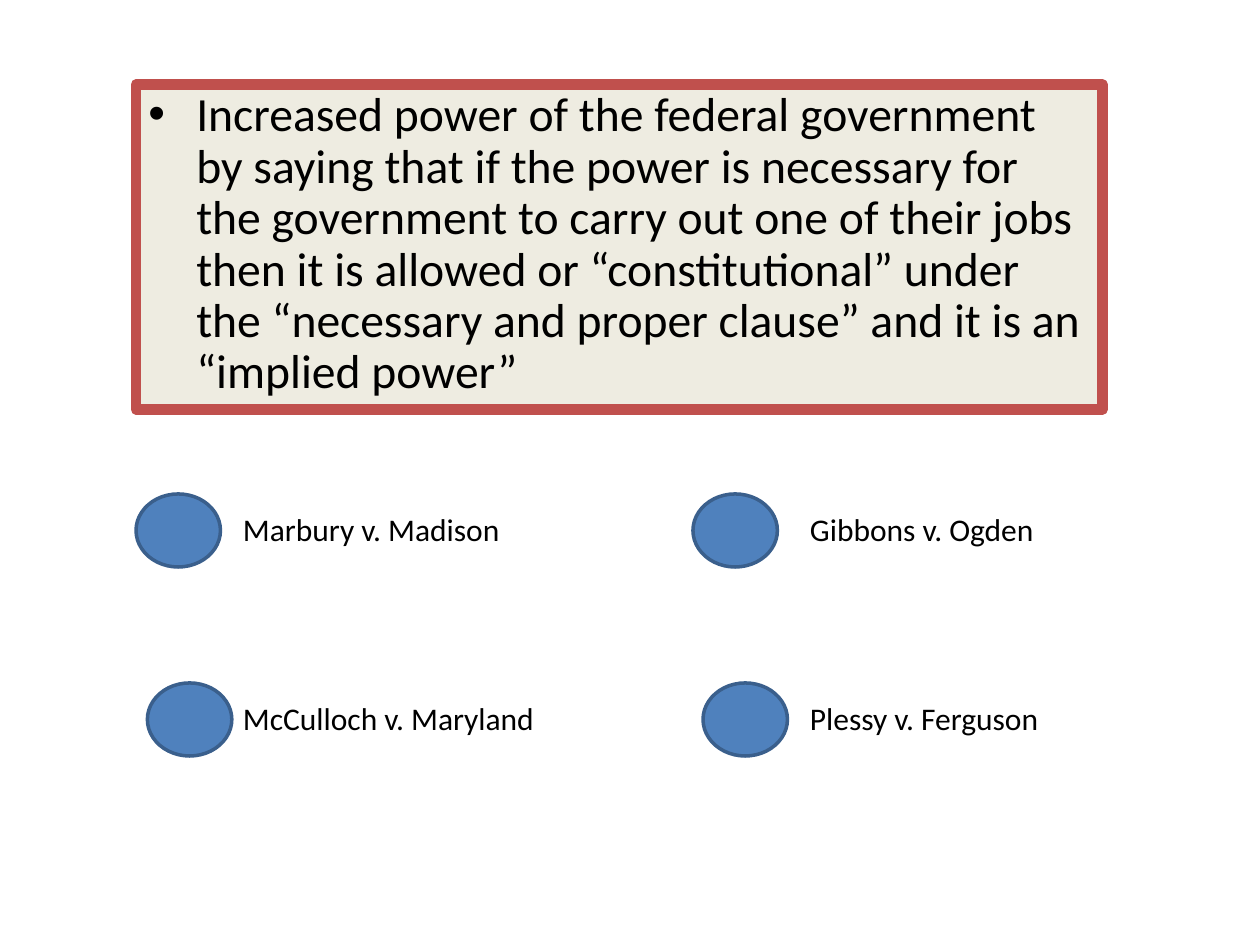
from lxml.etree import SubElement
from pptx import Presentation
from pptx.dml.color import RGBColor
from pptx.enum.shapes import MSO_SHAPE
from pptx.enum.text import MSO_ANCHOR, MSO_AUTO_SIZE, PP_ALIGN
from pptx.oxml.ns import qn
from pptx.util import Inches, Pt

RULING = (
    "Increased power of the federal government by saying that if the power is "
    "necessary for the government to carry out one of their jobs then it is allowed "
    "or “constitutional” under the “necessary and proper clause” and it is an "
    "“implied power”"
)
CHOICES = [
    ("Marbury v. Madison", 1.08, 1.83, 4, 2.58),
    ("Gibbons v. Ogden", 5.5, 6.33, 4, 2.25),
    ("McCulloch v. Maryland", 1.17, 1.83, 5.5, 2.54),
    ("Plessy v. Ferguson", 5.58, 6.33, 5.5, 2.17),
]


def color(value):
    """Turn a hex string into a colour."""
    return RGBColor.from_string(value)


def add_shape(page, kind, box, fill, line, width):
    """Add a filled and outlined shape without a shadow."""
    shape = page.shapes.add_shape(kind, *map(Inches, box))
    shape.shadow.inherit = False
    shape.fill.solid()
    shape.fill.fore_color.rgb = color(fill)
    shape.line.color.rgb = color(line)
    shape.line.width = Pt(width)
    return shape


def write(para, text, size):
    """Set and format the text of a paragraph."""
    para.text = text
    para.alignment = PP_ALIGN.LEFT
    for span in para.runs:
        span.font.name = "Calibri"
        span.font.size = Pt(size)
        span.font.color.rgb = color("000000")


def add_ruling(page, box):
    """Place the framed, bulleted ruling."""
    frame = add_shape(page, MSO_SHAPE.RECTANGLE, box, "EEECE1", "C0504D", 6)
    SubElement(frame.line._get_or_add_ln(), qn("a:round"))
    frame.text_frame.word_wrap = True
    frame.text_frame.vertical_anchor = MSO_ANCHOR.TOP
    para = frame.text_frame.paragraphs[0]
    write(para, RULING, 27.2)
    para.line_spacing = 0.9
    properties = para._p.get_or_add_pPr()
    properties.set("marL", str(Inches(0.38)))
    properties.set("indent", str(Inches(-0.38)))
    SubElement(properties, qn("a:buFont"), typeface="Arial")
    SubElement(properties, qn("a:buChar"), char="•")


def add_choice(page, name, circle_left, label_left, top, width):
    """Place an answer circle and the case name beside it."""
    circle = (circle_left, top - 0.08, 0.67, 0.58)
    add_shape(page, MSO_SHAPE.OVAL, circle, "4F81BD", "3A5F8C", 2)
    label = page.shapes.add_textbox(*map(Inches, (label_left, top, width, 0.4)))
    label.text_frame.word_wrap = True
    label.text_frame.auto_size = MSO_AUTO_SIZE.SHAPE_TO_FIT_TEXT
    write(label.text_frame.paragraphs[0], name, 18)


def main():
    """Build and save the slide."""
    deck = Presentation()
    deck.slide_width, deck.slide_height = Inches(10), Inches(7.5)
    page = deck.slides.add_slide(deck.slide_layouts[6])
    add_ruling(page, (1.08, 0.67, 7.67, 2.58))
    for choice in CHOICES:
        add_choice(page, *choice)
    deck.save("out.pptx")


if __name__ == "__main__":
    main()
